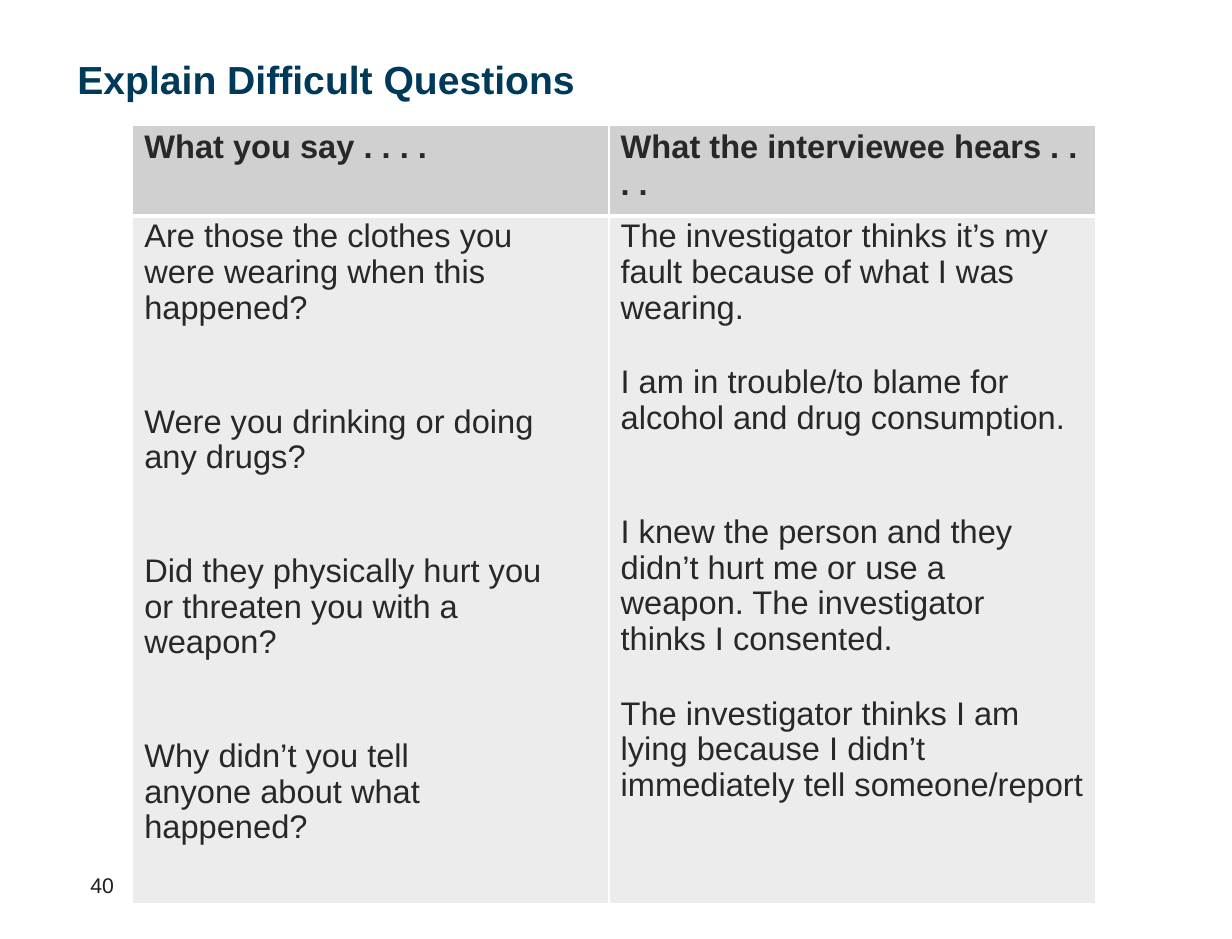
from pptx import Presentation
from pptx.dml.color import RGBColor
from pptx.enum.text import MSO_ANCHOR
from pptx.oxml import parse_xml
from pptx.oxml.ns import nsdecls
from pptx.util import Inches, Pt

TOP = MSO_ANCHOR.TOP
FONT = "Arial"
COLORS = {"title": "003A5A", "text": "282828", "number": "1E1E1E",
          "header": "D0D0D0", "body": "ECECEC", "border": "FFFFFF"}

TITLE = "Explain Difficult Questions"
NUMBER = "40"
HEADERS = [["What you say . . . ."], ["What the interviewee hears . .", ". ."]]
# Each body entry: text, space before in points, right margin in inches
BODY = [
    [("Are those the clothes you were wearing when this happened?", 0, 0.45),
     ("Were you drinking or doing any drugs?", 48, 0.45),
     ("Did they physically hurt you or threaten you with a weapon?", 48, 0.45),
     ("Why didn’t you tell anyone about what happened?", 48, 1.2)],
    [("The investigator thinks it’s my fault because of what I was wearing.", 0, 0.05),
     ("I am in trouble/to blame for alcohol and drug consumption.", 24, 0.05),
     ("I knew the person and they didn’t hurt me or use a weapon. "
      "The investigator thinks I consented.", 48, 0.3),
     ("The investigator thinks I am lying because I didn’t immediately tell "
      "someone/report", 24, 0.05)],
]
COL_WIDTHS = [4.06, 4.15]
ROW_HEIGHTS = [0.77, 5.86]


def style(p, size, color, bold=False):
    for r in p.runs:
        r.font.name = FONT
        r.font.size = Pt(size)
        r.font.bold = bold
        r.font.color.rgb = RGBColor.from_string(COLORS[color])


def add_text(s, box, text, size, color, bold=False):
    tf = s.shapes.add_textbox(*[Inches(v) for v in box]).text_frame
    tf.margin_left = tf.margin_top = tf.margin_right = tf.margin_bottom = 0
    tf.word_wrap = True
    tf.text = text
    style(tf.paragraphs[0], size, color, bold)


def set_borders(cell, widths):
    tcPr = cell._tc.get_or_add_tcPr()
    for i, (side, width) in enumerate(widths.items()):
        tcPr.insert(i, parse_xml(
            f'<a:{side} {nsdecls("a")} w="{Pt(width)}"><a:solidFill>'
            f'<a:srgbClr val="{COLORS["border"]}"/></a:solidFill></a:{side}>'))


def fill_cell(cell, paragraphs, is_header):
    cell.margin_left = cell.margin_right = cell.margin_bottom = 0
    cell.margin_top = Inches(0.03)
    cell.vertical_anchor = TOP
    cell.fill.solid()
    cell.fill.fore_color.rgb = RGBColor.from_string(
        COLORS["header" if is_header else "body"])
    set_borders(cell, {"lnL": 1, "lnR": 1, "lnT": 1 if is_header else 3,
                       "lnB": 3 if is_header else 1})
    tf = cell.text_frame
    tf.text = "\n".join(text for text, _, _ in paragraphs)
    for p, (_, before, right) in zip(tf.paragraphs, paragraphs):
        pPr = p._p.get_or_add_pPr()
        pPr.set("marL", str(Inches(0.1)))
        pPr.set("marR", str(Inches(right)))
        if before:
            p.space_before = Pt(before)
        if not is_header:
            p.line_spacing = 0.98
        style(p, 20, "text", is_header)


prs = Presentation()
prs.slide_width, prs.slide_height = Inches(10.5), Inches(8)
s = prs.slides.add_slide(prs.slide_layouts[6])

add_text(s, (0.66, 0.47, 4.6, 0.43), TITLE, 24, "title", True)

table = s.shapes.add_table(
    2, 2, Inches(1.13), Inches(1.07),
    Inches(sum(COL_WIDTHS)), Inches(sum(ROW_HEIGHTS))).table
for row, height in zip(table.rows, ROW_HEIGHTS):
    row.height = Inches(height)
for c, width in enumerate(COL_WIDTHS):
    table.columns[c].width = Inches(width)
    fill_cell(table.cell(0, c), [(text, 0, 0) for text in HEADERS[c]], True)
    fill_cell(table.cell(1, c), BODY[c], False)

add_text(s, (0.77, 7.43, 0.3, 0.24), NUMBER, 13, "number")

prs.save("out.pptx")
